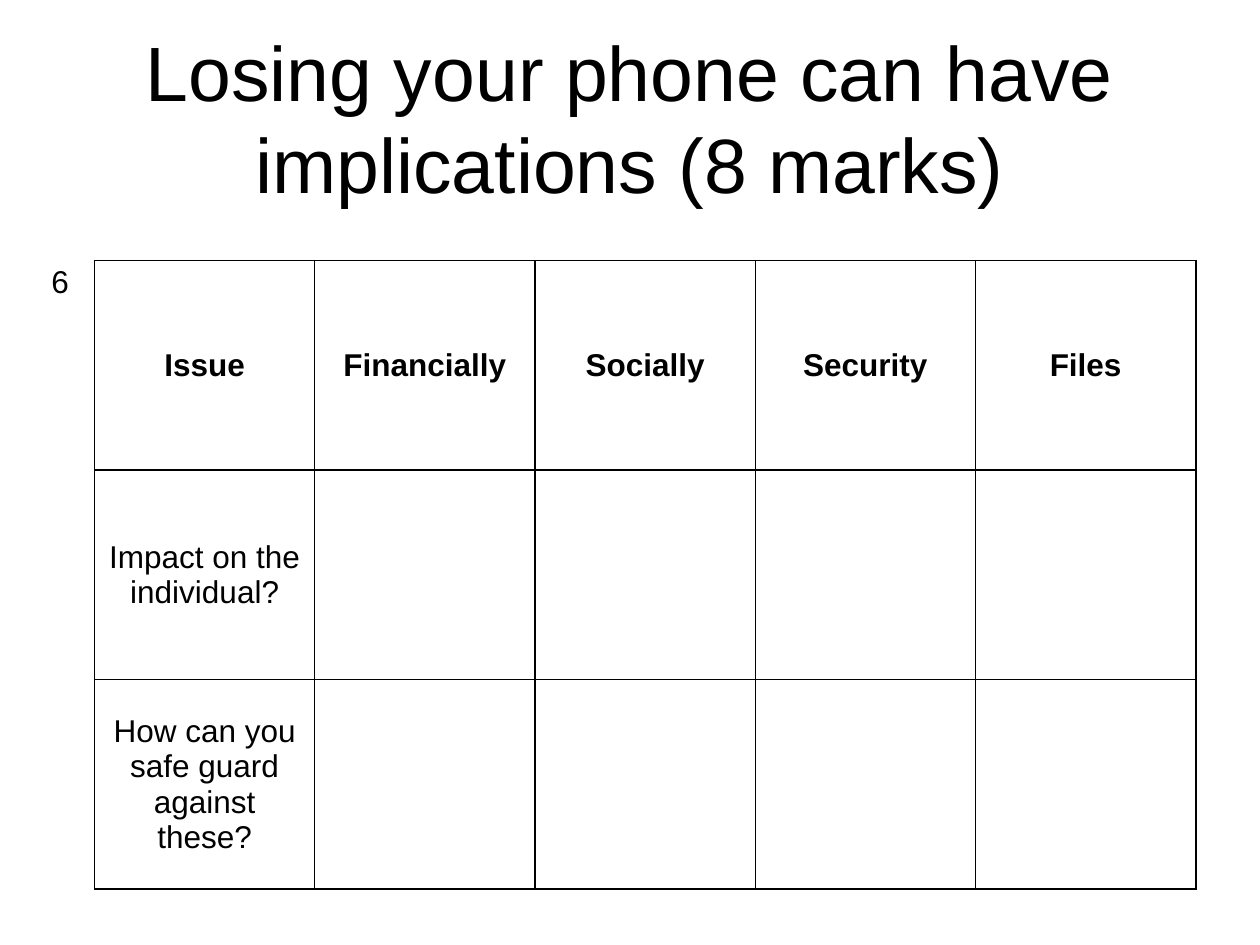
from lxml.etree import SubElement
from pptx import Presentation
from pptx.dml.color import RGBColor
from pptx.enum.text import MSO_ANCHOR, PP_ALIGN
from pptx.oxml.ns import qn
from pptx.util import Pt

BLACK, WHITE = "000000", "FFFFFF"
ROWS = [
    ["Issue", "Financially", "Socially", "Security", "Files"],
    ["Impact on the individual?", "", "", "", ""],
    ["How can you safe guard against these?", "", "", "", ""],
]


def color(code):
    return RGBColor.from_string(code)


def style(frame, size, align, bold=False):
    for para in frame.paragraphs:
        para.alignment = align
        for run in para.runs:
            font = run.font
            font.name, font.size, font.bold = "Arial", Pt(size), bold
            font.color.rgb = color(BLACK)


def add_text(slide, box, text, size, align, anchor):
    frame = slide.shapes.add_textbox(*map(Pt, box)).text_frame
    frame.word_wrap = True
    frame.vertical_anchor = anchor
    frame.text = text
    style(frame, size, align)


def add_border(cell, width):
    props = cell._tc.get_or_add_tcPr()
    for place, side in enumerate(("lnL", "lnR", "lnT", "lnB")):
        line = SubElement(props, qn("a:" + side), w=str(Pt(width)))
        fill = SubElement(line, qn("a:solidFill"))
        SubElement(fill, qn("a:srgbClr"), val=BLACK)
        # Borders come before the cell fill
        props.insert(place, line)


def add_grid(slide, box, rows):
    left, top, width, height = box
    count = len(rows[0])
    table = slide.shapes.add_table(len(rows), count, *map(Pt, box)).table
    table.horz_banding = False
    for col in table.columns:
        col.width = Pt(width / count)
    for row in table.rows:
        row.height = Pt(height / len(rows))
    for i, words in enumerate(rows):
        for j, text in enumerate(words):
            cell = table.cell(i, j)
            cell.fill.solid()
            cell.fill.fore_color.rgb = color(WHITE)
            add_border(cell, 1)
            cell.vertical_anchor = MSO_ANCHOR.MIDDLE
            if text:
                cell.text_frame.text = text
            style(cell.text_frame, 18, PP_ALIGN.CENTER, bold=i == 0)


def main():
    deck = Presentation()
    deck.slide_width, deck.slide_height = Pt(720), Pt(540)
    slide = deck.slides.add_slide(deck.slide_layouts[6])

    # Title
    add_text(slide, (36, 21.6, 648, 90),
             "Losing your phone can have implications (8 marks)",
             44, PP_ALIGN.CENTER, MSO_ANCHOR.MIDDLE)
    # Table of issues
    add_grid(slide, (54, 149, 629.3, 359.2), ROWS)
    # Question number
    add_text(slide, (22.3, 146.2, 33.8, 28.8), "6",
             18, PP_ALIGN.LEFT, MSO_ANCHOR.TOP)

    deck.save("out.pptx")


if __name__ == "__main__":
    main()
